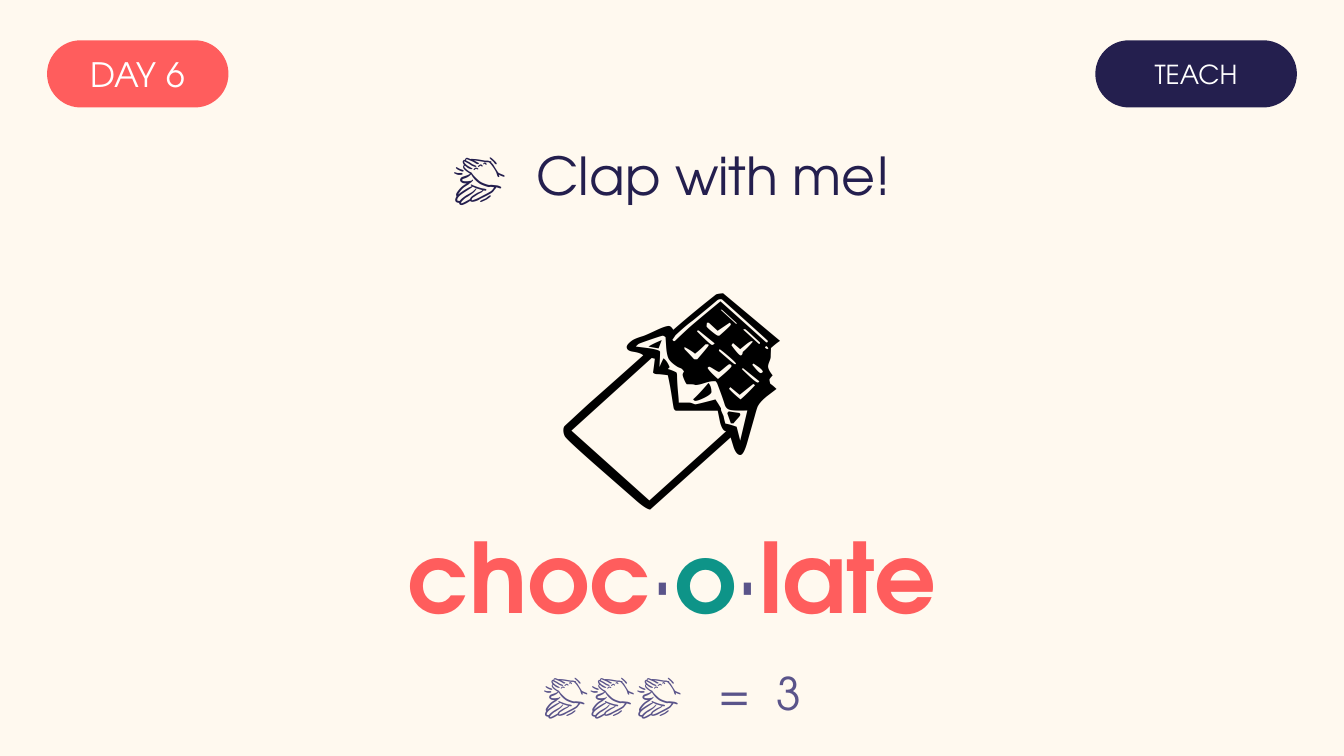
from pptx import Presentation
from pptx.dml.color import RGBColor
from pptx.enum.shapes import MSO_SHAPE
from pptx.enum.text import MSO_ANCHOR, MSO_AUTO_SIZE, PP_ALIGN
from pptx.util import Inches, Pt

FONT = "TeX Gyre Adventor"
CREAM, CORAL, NAVY = "FFF9EF", "FF5D5D", "241F4E"
VIOLET, TEAL, WHITE, BLACK = "5A548A", "0E9488", "FFFFFF", "000000"


def color(value):
    return RGBColor.from_string(value)


def write(box, spans, size, default_color, font_name=FONT, anchor=MSO_ANCHOR.MIDDLE):
    frame = box.text_frame
    frame.word_wrap = True
    frame.auto_size = MSO_AUTO_SIZE.NONE
    frame.vertical_anchor = anchor
    paragraph = frame.paragraphs[0]
    paragraph.alignment = PP_ALIGN.CENTER
    paragraph.font.name = font_name
    paragraph.font.size = Pt(size)
    paragraph.font.bold = False
    paragraph.font.color.rgb = color(default_color)
    for text in spans:
        span = paragraph.add_run()
        span.text = text
    return paragraph


deck = Presentation()
deck.slide_width = Inches(10)
deck.slide_height = Inches(10 * 9 / 16)
page = deck.slides.add_slide(deck.slide_layouts[5])
page.background.fill.solid()
page.background.fill.fore_color.rgb = color(CREAM)

for label, left, width, size, fill in [
    ("DAY 6", 0.35, 1.35, 18, CORAL),
    ("TEACH", 8.15, 1.5, 14, NAVY),
]:
    pill = page.shapes.add_shape(
        MSO_SHAPE.ROUNDED_RECTANGLE, Inches(left), Inches(0.3), Inches(width), Inches(0.5)
    )
    pill.adjustments[0] = 0.5
    pill.shadow.inherit = False
    pill.fill.solid()
    pill.fill.fore_color.rgb = color(fill)
    pill.line.fill.background()
    frame = pill.text_frame
    frame.margin_left = frame.margin_right = frame.margin_top = frame.margin_bottom = 0
    write(pill, [label], size, WHITE)

title = page.shapes.title
title.left, title.top = Inches(0), Inches(0.95)
title.width, title.height = Inches(10), Inches(0.7)
heading = write(title, ["👏", " ", "Clap with me!"], 28, NAVY)

chocolate = page.shapes.add_textbox(Inches(0), Inches(1.7), Inches(10), Inches(1.9))
write(chocolate, ["🍫"], 125, BLACK, "Calibri", MSO_ANCHOR.TOP)

word = page.shapes.add_textbox(Inches(0), Inches(3.85), Inches(10), Inches(0.85))
syllables = write(word, ["choc", "·", "o", "·", "late"], 52, CORAL)
for span, span_color in zip(syllables.runs, [CORAL, VIOLET, TEAL, VIOLET, CORAL]):
    span.font.color.rgb = color(span_color)
    span.font.bold = span_color != VIOLET

count = page.shapes.add_textbox(Inches(0), Inches(4.9), Inches(10), Inches(0.5))
total = write(count, ["👏👏👏", " ", "=", " ", "3"], 24, VIOLET)

for span, extra_points in [(heading.runs[1], 8), (total.runs[1], 13), (total.runs[3], 7)]:
    span._r.get_or_add_rPr().set("spc", str(extra_points * 100))

deck.save("out.pptx")
